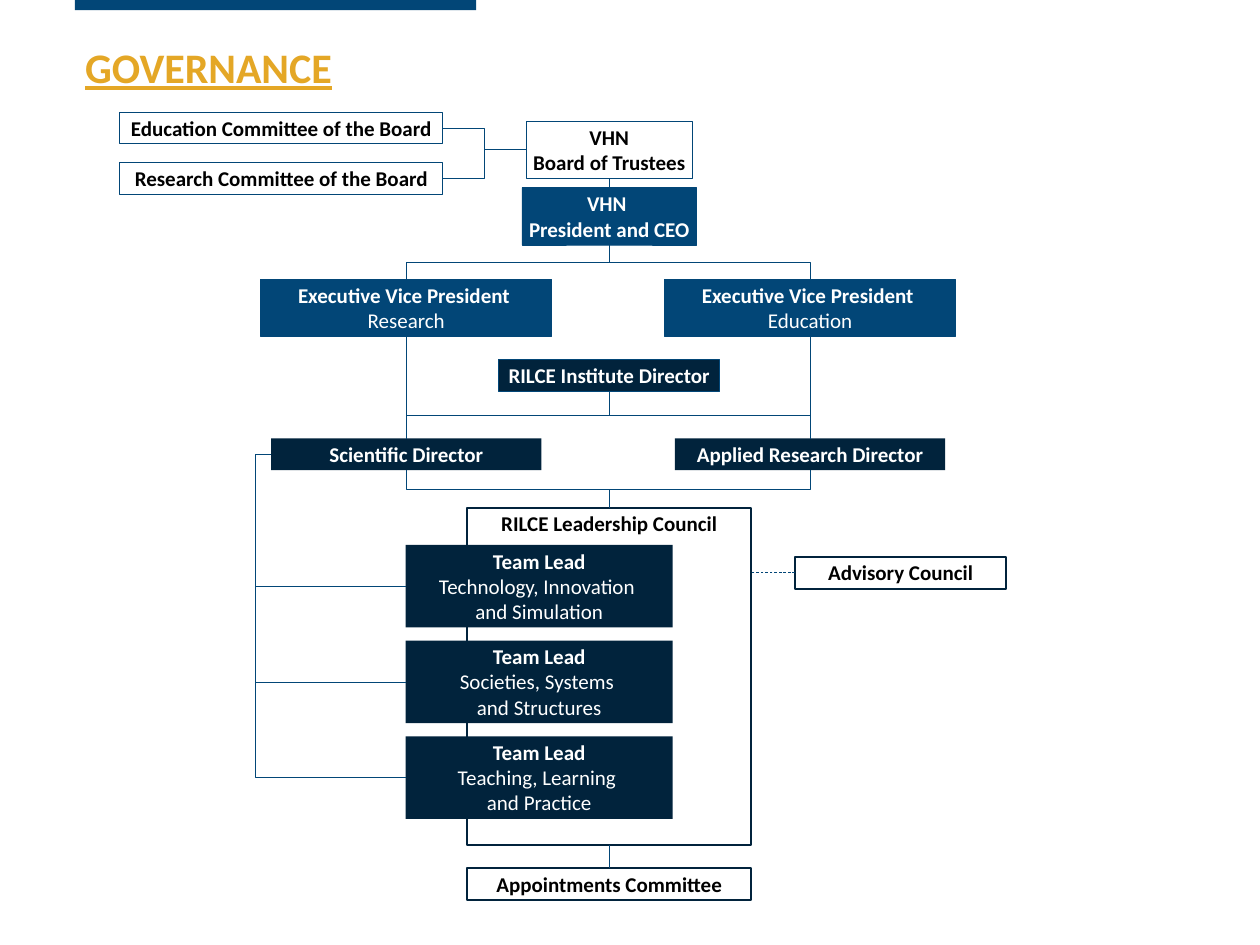
from dataclasses import dataclass

from lxml.etree import SubElement
from pptx import Presentation
from pptx.dml.color import RGBColor
from pptx.enum.dml import MSO_LINE_DASH_STYLE as Dash
from pptx.enum.shapes import MSO_CONNECTOR as Link, MSO_SHAPE as Preset
from pptx.enum.text import MSO_ANCHOR as Anchor, MSO_AUTO_SIZE as AutoSize, PP_ALIGN as Align
from pptx.oxml.ns import qn
from pptx.util import Cm, Pt

COLORS = {"blue": "024677", "navy": "01233C", "gold": "E4A726",
          "white": "FFFFFF", "black": "000000"}
FONT = "Calibri"

# Vertical axes and box heights, in centimetres
LEFT_AXIS, CENTER_AXIS, RIGHT_AXIS = 16.38, 24.56, 32.66
COMMITTEE_AXIS, TEAM_AXIS, ADVISORY_AXIS = 11.34, 21.74, 36.31
ONE_LINE, TWO_LINES, THREE_LINES = 1.28, 2.31, 3.33
TEAM_TOP, TEAM_PITCH = 21.97, 3.86
SIDE_BUS = 10.29

Point = tuple[float, float]


@dataclass(frozen=True)
class Style:
    fill: str | None
    line: str | None
    line_width: float
    font_color: str


OUTLINED = Style(None, "blue", 0.75, "black")
FRAMED = Style(None, "navy", 2.25, "black")
EXECUTIVE = Style("blue", "blue", 0.75, "white")
DIRECTOR = Style("navy", "blue", 0.75, "white")
STAFF = Style("navy", None, 0, "white")


@dataclass(frozen=True)
class Box:
    axis: float
    top_edge: float
    width: float
    height: float
    style: Style
    heading: tuple[str, ...]
    details: tuple[str, ...] = ()

    @property
    def top(self) -> Point:
        return self.axis, self.top_edge

    @property
    def bottom(self) -> Point:
        return self.axis, self.top_edge + self.height

    @property
    def left(self) -> Point:
        return self.axis - self.width / 2, self.top_edge + self.height / 2

    @property
    def right(self) -> Point:
        return self.axis + self.width / 2, self.top_edge + self.height / 2


def color(name: str) -> RGBColor:
    return RGBColor.from_string(COLORS[name])


def add_run(paragraph, text: str, size: float, font_color: str, bold: bool):
    run = paragraph.add_run()
    run.text = text
    run.font.name = FONT
    run.font.size = Pt(size)
    run.font.bold = bold
    run.font.color.rgb = color(font_color)
    return run


def add_rectangle(slide, left: float, top: float, width: float, height: float, style: Style):
    shape = slide.shapes.add_shape(Preset.RECTANGLE, Cm(left), Cm(top), Cm(width), Cm(height))
    shape.shadow.inherit = False
    if style.fill:
        shape.fill.solid()
        shape.fill.fore_color.rgb = color(style.fill)
    else:
        shape.fill.background()
    if style.line:
        shape.line.color.rgb = color(style.line)
        shape.line.width = Pt(style.line_width)
    else:
        shape.line.fill.background()
    return shape


def draw_box(slide, box: Box) -> None:
    shape = add_rectangle(slide, box.left[0], box.top_edge, box.width, box.height, box.style)
    frame = shape.text_frame
    frame.word_wrap = False
    frame.vertical_anchor = Anchor.TOP
    lines = [(text, True) for text in box.heading] + [(text, False) for text in box.details]
    for index, (text, bold) in enumerate(lines):
        paragraph = frame.add_paragraph() if index else frame.paragraphs[0]
        paragraph.alignment = Align.CENTER
        add_run(paragraph, text, 24, box.style.font_color, bold)


def draw_link(slide, kind: Link, start: Point, end: Point, width: float = 0.5):
    connector = slide.shapes.add_connector(kind, *(Cm(value) for value in (*start, *end)))
    connector.line.color.rgb = color("blue")
    connector.line.width = Pt(width)
    SubElement(connector._element.spPr, qn("a:effectLst"))
    return connector


def draw_vertical_elbow(slide, start: Point, end: Point) -> None:
    """Leave the start vertically: an elbow laid flat, then turned a quarter."""
    middle_x, middle_y = (start[0] + end[0]) / 2, (start[1] + end[1]) / 2
    half_x, half_y = (end[0] - start[0]) / 2, (end[1] - start[1]) / 2
    connector = draw_link(slide, Link.ELBOW, (middle_x - half_y, middle_y + half_x),
                          (middle_x + half_y, middle_y - half_x))
    connector._element.spPr.find(qn("a:xfrm")).set("rot", "5400000")


def draw_side_elbow(slide, start: Point, end: Point, bus: float) -> None:
    """Bend at the given horizontal position, even outside the two ends."""
    connector = draw_link(slide, Link.ELBOW, start, end)
    share = round((bus - start[0]) / (end[0] - start[0]) * 100000)
    adjustments = connector._element.spPr.find(qn("a:prstGeom")).get_or_add_avLst()
    SubElement(adjustments, qn("a:gd"), name="adj1", fmla=f"val {share}")


def draw_title(slide, text: str) -> None:
    title = slide.shapes.title
    title.left, title.top, title.width, title.height = Cm(3.18), Cm(1.78), Cm(38.38), Cm(2.69)
    frame = title.text_frame
    frame.auto_size = AutoSize.NONE
    frame.vertical_anchor = Anchor.TOP
    paragraph = frame.paragraphs[0]
    paragraph.alignment = Align.LEFT
    paragraph.line_spacing = 0.9
    add_run(paragraph, text, 48, "gold", True).font.underline = True


def main() -> None:
    presentation = Presentation()
    presentation.slide_width, presentation.slide_height = Cm(50.8), Cm(38.1)
    slide = presentation.slides.add_slide(presentation.slide_layouts[5])

    # Header
    add_rectangle(slide, 3.02, 0, 16.18, 0.41, Style("blue", None, 0, "white"))
    draw_title(slide, "GOVERNANCE")

    # Board and executives
    committees = [Box(COMMITTEE_AXIS, top, 13.03, ONE_LINE, OUTLINED,
                      (f"{field} Committee of the Board",))
                  for field, top in (("Education", 4.52), ("Research", 6.55))]
    trustees = Box(CENTER_AXIS, 4.88, 6.71, TWO_LINES, OUTLINED, ("VHN", "Board of Trustees"))
    president = Box(CENTER_AXIS, 7.57, 7.04, TWO_LINES, EXECUTIVE, ("VHN ", "President and CEO"))
    vice_presidents = [Box(axis, 11.25, 11.73, TWO_LINES, EXECUTIVE,
                           ("Executive Vice President ",), (field,))
                       for axis, field in ((LEFT_AXIS, "Research"), (RIGHT_AXIS, "Education"))]

    # Directors
    institute = Box(CENTER_AXIS, 14.5, 8.92, ONE_LINE, DIRECTOR, ("RILCE Institute Director",))
    directors = [Box(axis, 17.68, 10.9, ONE_LINE, STAFF, (name,))
                 for axis, name in ((LEFT_AXIS, "Scientific Director"),
                                    (RIGHT_AXIS, "Applied Research Director"))]

    # Councils and team leads
    council = Box(CENTER_AXIS, 20.47, 11.46, 13.59, FRAMED, ("RILCE Leadership Council",))
    topics = (("Technology, Innovation ", "and Simulation"),
              ("Societies, Systems ", "and Structures"),
              ("Teaching, Learning ", "and Practice"))
    teams = [Box(TEAM_AXIS, TEAM_TOP + index * TEAM_PITCH, 10.77, THREE_LINES, STAFF,
                 ("Team Lead",), topic) for index, topic in enumerate(topics)]
    appointments = Box(CENTER_AXIS, 35, 11.46, ONE_LINE, FRAMED, ("Appointments Committee",))
    advisory = Box(ADVISORY_AXIS, 22.45, 8.51, ONE_LINE, FRAMED, ("Advisory Council",))

    for box in (*committees, trustees, president, *vice_presidents, institute, *directors,
                council, *teams, appointments, advisory):
        draw_box(slide, box)

    # Straight links
    for upper, lower in ((trustees, president), (council, appointments),
                         *zip(vice_presidents, directors)):
        draw_link(slide, Link.STRAIGHT, upper.bottom, lower.top)
    advice = draw_link(slide, Link.STRAIGHT, advisory.left,
                       (council.right[0], advisory.left[1]), 0.75)
    advice.line.dash_style = Dash.DASH

    # Bent links
    for committee in committees:
        draw_link(slide, Link.ELBOW, committee.right, trustees.left)
    for vice_president, director in zip(vice_presidents, directors):
        draw_vertical_elbow(slide, vice_president.top, president.bottom)
        draw_vertical_elbow(slide, institute.bottom, director.top)
        draw_vertical_elbow(slide, director.bottom, council.top)
    for team in teams:
        draw_side_elbow(slide, directors[0].left, team.left, SIDE_BUS)

    presentation.save("out.pptx")


if __name__ == "__main__":
    main()
